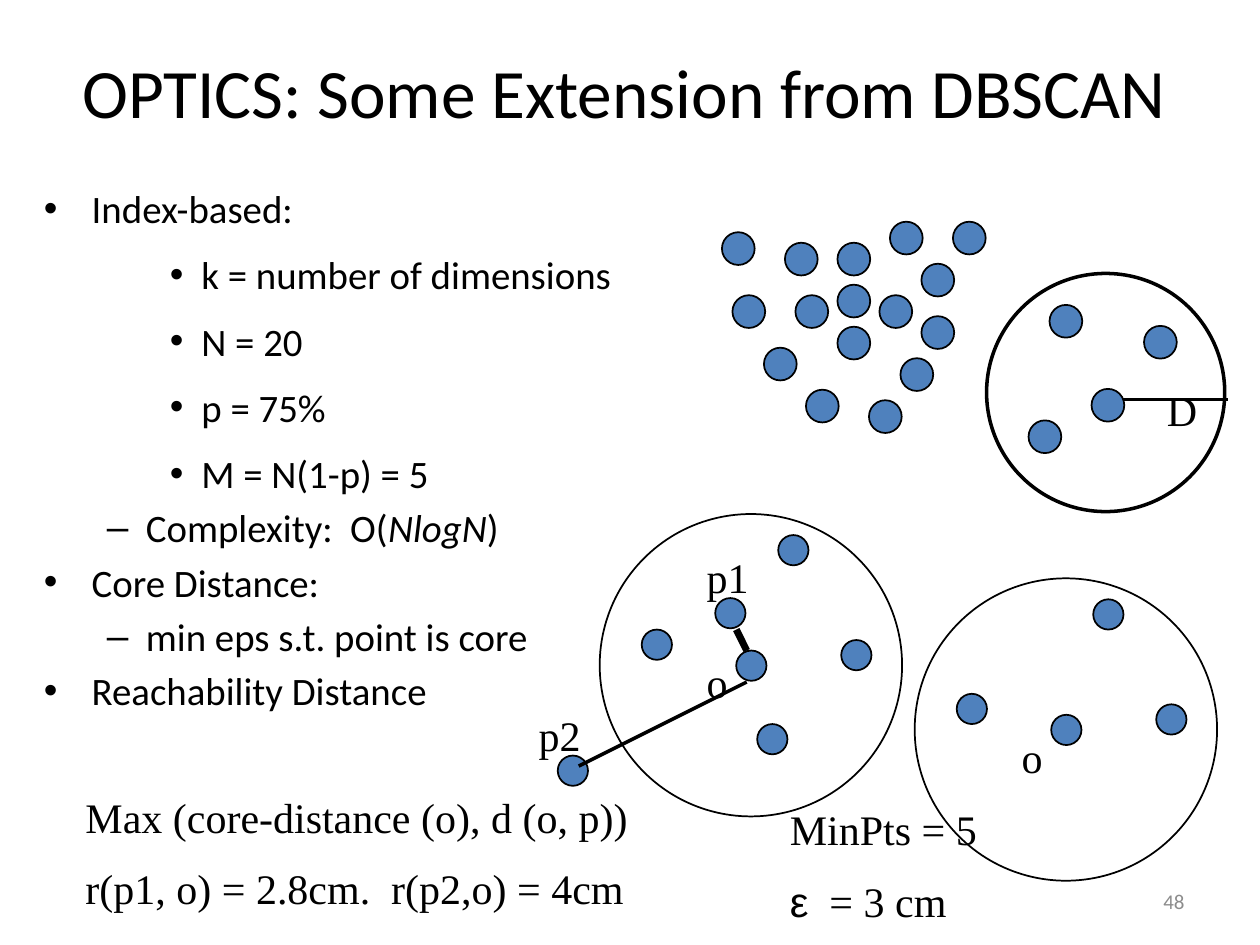
from dataclasses import dataclass

from lxml import etree
from pptx import Presentation
from pptx.dml.color import RGBColor
from pptx.enum.shapes import MSO_CONNECTOR, MSO_SHAPE
from pptx.enum.text import MSO_ANCHOR, PP_ALIGN
from pptx.oxml.ns import qn
from pptx.util import Inches, Pt

OVAL = MSO_SHAPE.OVAL
STRAIGHT = MSO_CONNECTOR.STRAIGHT
LEFT, CENTER, RIGHT = PP_ALIGN.LEFT, PP_ALIGN.CENTER, PP_ALIGN.RIGHT
TOP, MIDDLE = MSO_ANCHOR.TOP, MSO_ANCHOR.MIDDLE

CELL = 1 / 12  # the diagrams sit on a grid of twelve cells to the inch


@dataclass(frozen=True)
class Theme:
    ink: RGBColor = RGBColor(0x00, 0x00, 0x00)
    point: RGBColor = RGBColor(0x4F, 0x81, 0xBD)
    muted: RGBColor = RGBColor(0x8C, 0x8C, 0x8C)
    sans: str = "Calibri"
    serif: str = "Times New Roman"
    symbol: str = "Arial"
    title: float = 39.6
    body: float = 22.2
    label: float = 24
    number: float = 12


THEME = Theme()

# bullet, left margin, hanging indent, space before as a share of the type size
LEVELS = [("•", 0.38, 0.38, 0.2), ("–", 0.81, 0.31, 0.2), ("•", 1.25, 0.25, 0.5)]

OUTLINE = [
    (0, ["Index-based:"]),
    (2, ["k = number of dimensions"]),
    (2, ["N = 20"]),
    (2, ["p = 75%"]),
    (2, ["M = N(1-p) = 5"]),
    (1, ["Complexity:  O(", "NlogN", ")"]),
    (0, ["Core Distance:"]),
    (1, ["min eps s.t. point is core"]),
    (0, ["Reachability Distance"]),
]

# Points as (column, row) cells from the top left of their diagram
CLOUD = [(0, 1), (6, 2), (11, 2), (16, 0), (22, 0), (19, 4), (1, 7), (7, 7),
         (11, 6), (15, 7), (11, 10), (19, 9), (4, 12), (17, 13), (8, 16), (14, 17)]
RADIUS_POINTS = [(6, 3), (15, 5), (10, 11), (4, 14)]
RING_POINTS = [(4, 11), (13, 13), (23, 12), (17, 2)]
REACH_POINTS = RING_POINTS + [(11, 8), (15, 20), (-4, 23)]


def add_text(s, box, font, size, lines, align=LEFT, anchor=TOP, color=THEME.ink, before=0.0):
    """Each line is a list of runs; before is a share of the type size."""
    tf = s.shapes.add_textbox(*map(Inches, box)).text_frame
    tf.word_wrap = True
    tf.vertical_anchor = anchor
    for i, runs in enumerate(lines):
        p = tf.paragraphs[0] if i == 0 else tf.add_paragraph()
        p.alignment = align
        p.space_before = Pt(before * size)
        for text in runs:
            r = p.add_run()
            r.text = text
            r.font.name, r.font.size = font, Pt(size)
            r.font.color.rgb = color
    return tf


def add_bullet(p, level):
    char, margin, hang, before = LEVELS[level]
    p.space_before = Pt(before * THEME.body)
    pPr = p._p.get_or_add_pPr()
    pPr.set("marL", str(Inches(margin)))
    pPr.set("indent", str(-Inches(hang)))
    etree.SubElement(pPr, qn("a:buFont")).set("typeface", THEME.symbol)
    etree.SubElement(pPr, qn("a:buChar")).set("char", char)


def add_circle(s, x, y, size, width=1, fill=None):
    sp = s.shapes.add_shape(OVAL, *map(Inches, (x, y, size, size)))
    sp.shadow.inherit = False
    if fill is None:
        sp.fill.background()
    else:
        sp.fill.solid()
        sp.fill.fore_color.rgb = fill
    sp.line.color.rgb = THEME.ink
    sp.line.width = Pt(width)


def add_line(s, start, end, width):
    line = s.shapes.add_connector(STRAIGHT, *map(Inches, (*start, *end)))
    line.line.color.rgb = THEME.ink
    line.line.width = Pt(width)
    etree.SubElement(line._element.spPr, qn("a:effectLst"))


def add_diagram(s, left, top, points, dot, ring=None, ring_width=1, labels=(), lines=()):
    """Scatter points, with an optional ring, labels and lines, all placed in cells."""
    def at(col, row):
        return left + col * CELL, top + row * CELL

    if ring:
        add_circle(s, left, top, ring, ring_width)
    for cell in points:
        add_circle(s, *at(*cell), dot, fill=THEME.point)
    for text, cell in labels:
        add_text(s, (*at(*cell), 0.58, 0.5), THEME.serif, THEME.label, [[text]], before=0.5)
    for start, end, width in lines:
        add_line(s, at(*start), at(*end), width)


def add_outline(s, box):
    tf = add_text(s, box, THEME.sans, THEME.body, [runs for _, runs in OUTLINE])
    for p, (level, runs) in zip(tf.paragraphs, OUTLINE):
        add_bullet(p, level)
        for r in p.runs[1:2]:
            r.font.italic = True


def add_formulas(s, box, lines):
    return add_text(s, box, THEME.serif, THEME.label, lines, before=0.5)


def build_slide(prs):
    s = prs.slides.add_slide(prs.slide_layouts[6])
    add_text(s, (0.33, 0.48, 9.25, 0.48), THEME.sans, THEME.title,
             [["OPTICS: Some Extension from DBSCAN"]], CENTER, MIDDLE)
    add_outline(s, (0.25, 1.42, 5.67, 4.33))
    add_text(s, (7.17, 6.95, 2.33, 0.4), THEME.sans, THEME.number,
             [["48"]], RIGHT, MIDDLE, THEME.muted)

    add_diagram(s, 5.73, 1.76, CLOUD, 0.26)
    add_diagram(s, 7.83, 2.17, RADIUS_POINTS, 0.26, ring=1.89, ring_width=2,
                labels=[("D", (16, 10))], lines=[((13, 12), (23, 12), 2)])
    add_diagram(s, 4.76, 4.08, REACH_POINTS, 0.24, ring=2.4,
                labels=[("p1", (9, 3)), ("o", (9, 13)), ("p2", (-7, 18))],
                lines=[((13, 11), (14, 13), 4), ((14, 16), (-2, 24), 2)])
    add_diagram(s, 7.26, 4.59, RING_POINTS, 0.24, ring=2.4, labels=[("o", (9, 14))])

    tf = add_formulas(s, (6.17, 6.33, 1.92, 1.1), [["MinPts = 5"], ["ε", "  = 3 cm"]])
    tf.paragraphs[1].runs[0].font.name = THEME.symbol
    add_formulas(s, (0.58, 6.23, 4.75, 1.1),
                 [["Max (core-distance (o), d (o, p))"], ["r(p1, o) = 2.8cm.  r(p2,o) = 4cm"]])


def main():
    prs = Presentation()
    prs.slide_width, prs.slide_height = Inches(10), Inches(7.5)
    build_slide(prs)
    prs.save("out.pptx")


if __name__ == "__main__":
    main()
